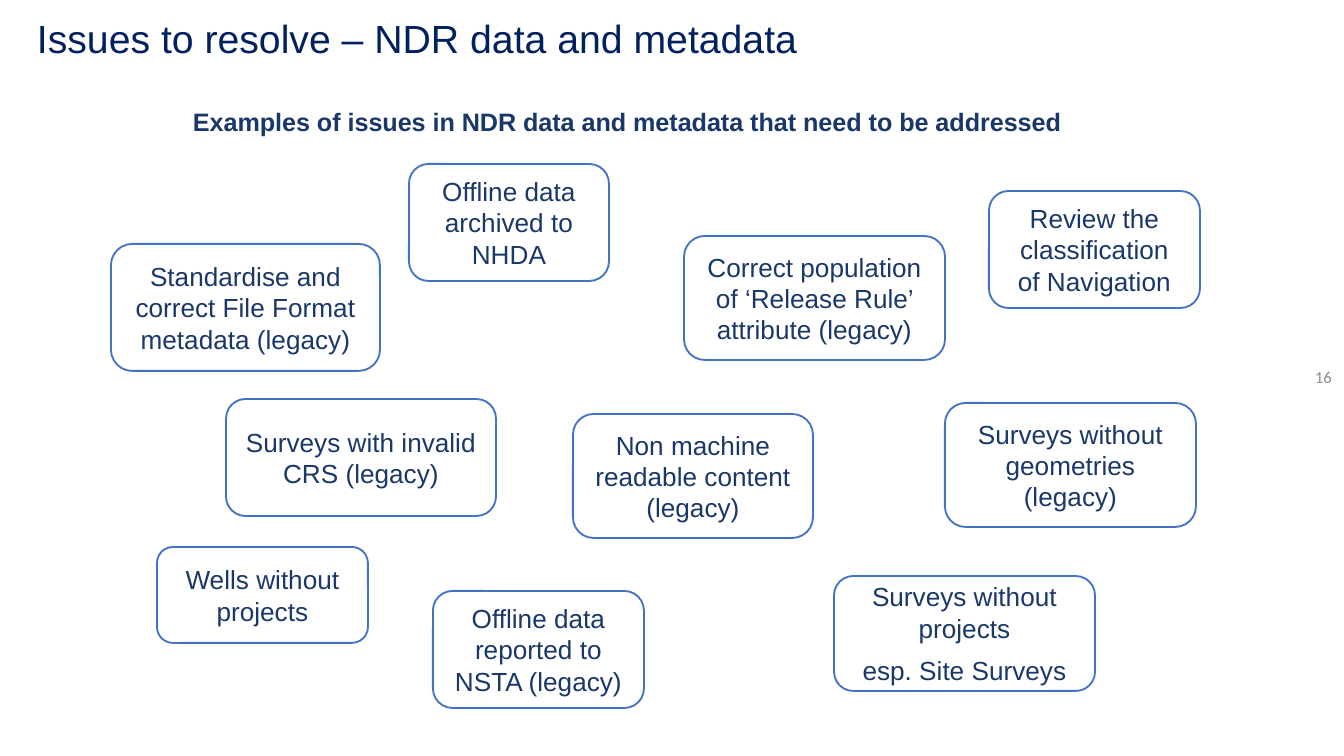
from pptx import Presentation
from pptx import util as u
from pptx.dml.color import RGBColor
from pptx.enum import shapes, text

PX = 914400 / 134.4  # EMU in one px
NAVY, TITLE, BLUE, GREY, WHITE = "193768", "002060", "4472C4", "8C8C8C", "FFFFFF"


def px(*lengths):
    return [u.Emu(round(n * PX)) for n in lengths]


def color(value):
    return RGBColor.from_string(value)


def write(tf, lines, size=14, fill=NAVY, font="Arial", bold=False,
          align=text.PP_ALIGN.LEFT, anchor=text.MSO_ANCHOR.TOP,
          margins=(13, 7, 13, 7), spacing=None, gap=6):
    """Fill a text frame with one paragraph for each line of the text."""
    tf.word_wrap = True
    tf.vertical_anchor = anchor
    tf.margin_left, tf.margin_top, tf.margin_right, tf.margin_bottom = px(*margins)
    for i, line in enumerate(lines.split("\n")):
        p = tf.add_paragraph() if i else tf.paragraphs[0]
        p.alignment = align
        if spacing:
            p.line_spacing = spacing
        if i:
            p.space_before = u.Pt(gap)
        r = p.add_run()
        r.text = line
        r.font.name, r.font.size, r.font.bold = font, u.Pt(size), bold
        r.font.color.rgb = color(fill)


class Deck:
    def __init__(self, width, height):
        self.prs = Presentation()
        self.prs.slide_width, self.prs.slide_height = px(width, height)
        self.s = self.prs.slides.add_slide(self.prs.slide_layouts[6])

    def label(self, x, y, w, h, words, **style):
        sp = self.s.shapes.add_textbox(*px(x, y, w, h))
        write(sp.text_frame, words, **style)

    def card(self, x, y, w, h, words):
        sp = self.s.shapes.add_shape(
            shapes.MSO_SHAPE.ROUNDED_RECTANGLE, *px(x, y, w, h))
        sp.shadow.inherit = False
        sp.fill.solid()
        sp.fill.fore_color.rgb = color(WHITE)
        sp.line.color.rgb = color(BLUE)
        sp.line.width = u.Pt(1)
        write(sp.text_frame, words, align=text.PP_ALIGN.CENTER,
              anchor=text.MSO_ANCHOR.MIDDLE)


# Issue cards: left, top, width, height, wording
ISSUES = [
    (111, 244, 269, 127, "Standardise and correct File Format metadata (legacy)"),
    (409, 164, 200, 117, "Offline data archived to NHDA"),
    (684, 236, 261, 124, "Correct population of ‘Release Rule’ attribute (legacy)"),
    (989, 191, 211, 117, "Review the classification of Navigation"),
    (226, 399, 270, 117, "Surveys with invalid CRS (legacy)"),
    (573, 414, 240, 124, "Non machine readable content (legacy)"),
    (945, 403, 251, 124, "Surveys without geometries (legacy)"),
    (157, 547, 211, 96, "Wells without projects"),
    (433, 591, 211, 117, "Offline data reported to NSTA (legacy)"),
    (834, 576, 261, 115, "Surveys without projects\nesp. Site Surveys"),
]


def main():
    deck = Deck(1344, 756)

    # Page number, title and lead line
    deck.label(1251, 353, 91, 48, "16", size=9, fill=GREY, font="Calibri",
               align=text.PP_ALIGN.RIGHT, anchor=text.MSO_ANCHOR.MIDDLE,
               margins=(10, 5, 10, 5))
    deck.label(37, 20, 915, 55, "Issues to resolve – NDR data and metadata",
               size=21, fill=TITLE, margins=(0, 0, 13, 7), spacing=0.9)
    deck.label(180, 99, 915, 44,
               "Examples of issues in NDR data and metadata that need to be addressed",
               size=13.5, bold=True)

    # Scattered issues
    for issue in ISSUES:
        deck.card(*issue)

    deck.prs.save("out.pptx")


if __name__ == "__main__":
    main()
